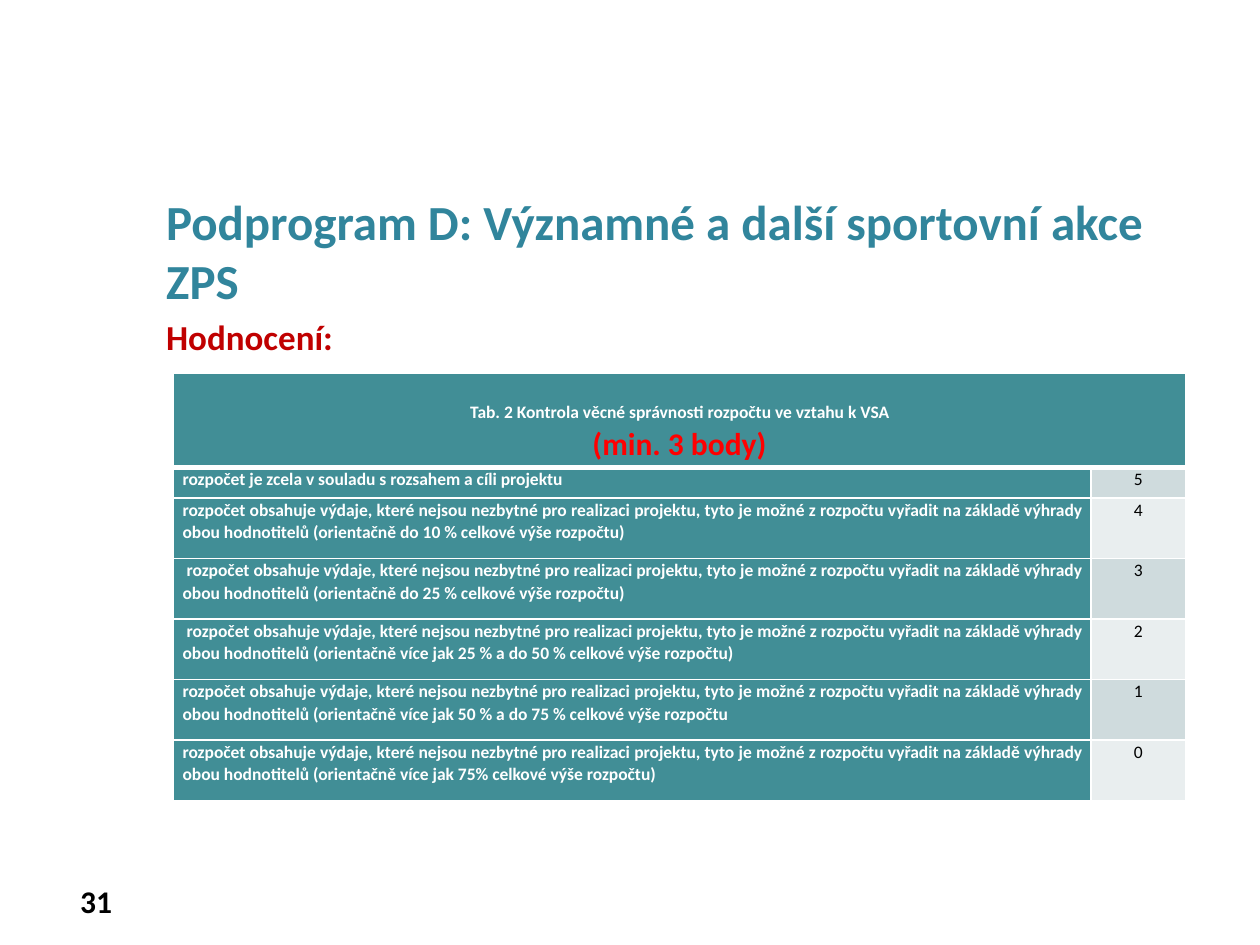
from dataclasses import dataclass

from lxml import etree
from pptx import Presentation
from pptx.dml.color import RGBColor
from pptx.enum import text
from pptx.oxml import ns
from pptx.util import Cm, Pt


@dataclass(frozen=True)
class Theme:
    font: str = "Calibri"
    title: str = "31859C"
    subtitle: str = "C00000"
    alert: str = "FF0000"
    teal: str = "418E96"
    bands: tuple[str, str] = ("CFDBDD", "E9EEEF")
    white: str = "FFFFFF"
    black: str = "000000"
    title_size: int = 28
    subtitle_size: int = 20
    large_size: int = 18
    table_size: int = 10


@dataclass(frozen=True)
class Line:
    words: str
    size: int
    color: str
    bold: bool = True
    align: text.PP_ALIGN = text.PP_ALIGN.LEFT
    before: float = 0
    spacing: float = 1.0


@dataclass(frozen=True)
class Criterion:
    words: str
    score: int


THEME = Theme()
TABLE_SPACING = 1.07
RULE, HEADER_RULE = 1, 3

OVERSPEND = ("rozpočet obsahuje výdaje, které nejsou nezbytné pro realizaci projektu, "
             "tyto je možné z rozpočtu vyřadit na základě výhrady obou hodnotitelů "
             "(orientačně ")
CRITERIA = [
    Criterion("rozpočet je zcela v souladu s rozsahem a cíli projektu", 5),
    Criterion(OVERSPEND + "do 10 % celkové výše rozpočtu)", 4),
    Criterion(" " + OVERSPEND + "do 25 % celkové výše rozpočtu)", 3),
    Criterion(" " + OVERSPEND + "více jak 25 % a do 50 % celkové výše rozpočtu)", 2),
    Criterion(OVERSPEND + "více jak 50 % a do 75 % celkové výše rozpočtu", 1),
    Criterion(OVERSPEND + "více jak 75% celkové výše rozpočtu)", 0),
]


def set_all(target, values: dict) -> None:
    for name, value in values.items():
        setattr(target, name, value)


def write(frame, lines: list[Line]) -> None:
    for index, line in enumerate(lines):
        para = frame.paragraphs[0] if index == 0 else frame.add_paragraph()
        set_all(para, {"alignment": line.align, "line_spacing": line.spacing,
                       "space_before": Pt(line.before)})
        span = para.add_run()
        span.text = line.words
        set_all(span.font, {"name": THEME.font, "size": Pt(line.size), "bold": line.bold})
        span.font.color.rgb = RGBColor.from_string(line.color)


def add_text(page, left: float, top: float, width: float, height: float,
             lines: list[Line], anchor=text.MSO_ANCHOR.TOP) -> None:
    box = page.shapes.add_textbox(Cm(left), Cm(top), Cm(width), Cm(height))
    set_all(box.text_frame, {"word_wrap": True, "vertical_anchor": anchor})
    write(box.text_frame, lines)


def add_borders(cell, top: float, bottom: float) -> None:
    properties = cell._tc.get_or_add_tcPr()
    widths = {"lnL": RULE, "lnR": RULE, "lnT": top, "lnB": bottom}
    for index, (side, width) in enumerate(widths.items()):
        border = etree.Element(ns.qn(f"a:{side}"), w=str(Pt(width)))
        fill = etree.SubElement(border, ns.qn("a:solidFill"))
        etree.SubElement(fill, ns.qn("a:srgbClr"), val=THEME.white)
        properties.insert(index, border)


def fill_cell(cell, color: str, lines: list[Line], top: float = RULE,
              bottom: float = RULE) -> None:
    set_all(cell, {"margin_left": Cm(0.18), "margin_right": Cm(0.18),
                   "margin_top": 0, "margin_bottom": 0})
    cell.fill.solid()
    cell.fill.fore_color.rgb = RGBColor.from_string(color)
    add_borders(cell, top, bottom)
    write(cell.text_frame, lines)


def add_score_table(page) -> None:
    widths = [18.49, 1.91]
    heights = [1.91, 0.61] + [1.22] * (len(CRITERIA) - 1)
    table = page.shapes.add_table(len(heights), len(widths), Cm(3.5), Cm(7.52),
                                  Cm(sum(widths)), Cm(sum(heights))).table
    set_all(table, {"first_row": False, "horz_banding": False})
    for column, width in zip(table.columns, widths):
        column.width = Cm(width)
    for row, height in zip(table.rows, heights):
        row.height = Cm(height)

    center = {"align": text.PP_ALIGN.CENTER, "spacing": TABLE_SPACING}
    header = table.cell(0, 0)
    header.merge(table.cell(0, 1))
    fill_cell(header, THEME.teal, [
        Line("Tab. 2 Kontrola věcné správnosti rozpočtu ve vztahu k VSA",
             THEME.table_size, THEME.white, **center),
        Line("(min. 3 body)", THEME.large_size, THEME.alert, **center),
    ], bottom=HEADER_RULE)
    set_all(header, {"vertical_anchor": text.MSO_ANCHOR.BOTTOM, "margin_bottom": Cm(0.08)})
    fill_cell(table.cell(0, 1), THEME.teal, [], bottom=HEADER_RULE)

    for index, criterion in enumerate(CRITERIA):
        top = HEADER_RULE if index == 0 else RULE
        fill_cell(table.cell(index + 1, 0), THEME.teal, [
            Line(criterion.words, THEME.table_size, THEME.white,
                 align=text.PP_ALIGN.JUSTIFY, spacing=TABLE_SPACING)], top)
        fill_cell(table.cell(index + 1, 1), THEME.bands[index % 2], [
            Line(str(criterion.score), THEME.table_size, THEME.black, bold=False,
                 **center)], top)


def main() -> None:
    deck = Presentation()
    set_all(deck, {"slide_width": Cm(25.4), "slide_height": Cm(19.05)})
    page = deck.slides.add_slide(deck.slide_layouts[6])
    add_text(page, 0.71, 17.65, 1.8, 1.02,
             [Line("31", THEME.large_size, THEME.black, align=text.PP_ALIGN.RIGHT)],
             text.MSO_ANCHOR.MIDDLE)
    add_text(page, 3.1, 3.73, 21.03, 14.6, [
        Line("Podprogram D: Významné a další sportovní akce ZPS",
             THEME.title_size, THEME.title),
        Line("Hodnocení:", THEME.subtitle_size, THEME.subtitle, before=4),
    ])
    add_score_table(page)
    deck.save("out.pptx")


if __name__ == "__main__":
    main()
